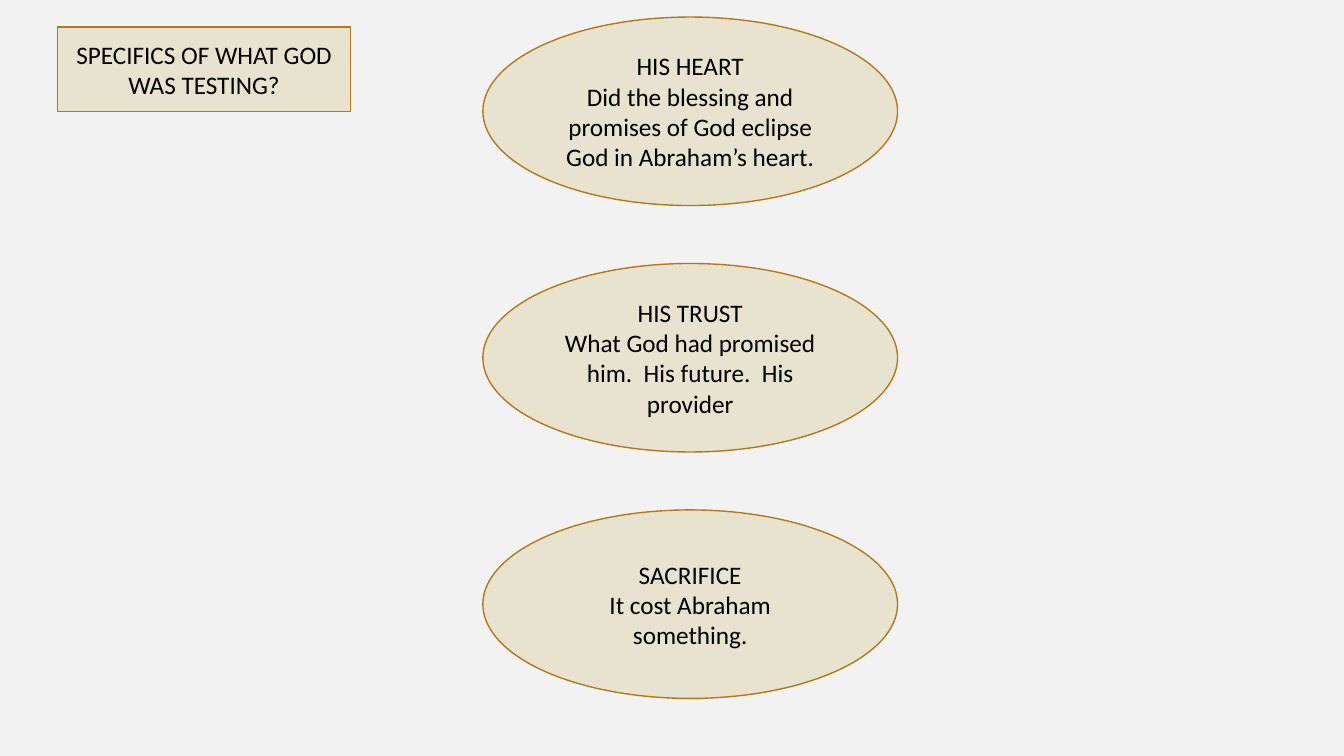
from pptx import Presentation
from pptx.dml.color import RGBColor
from pptx.enum.shapes import MSO_SHAPE
from pptx.enum.text import MSO_ANCHOR, PP_ALIGN
from pptx.util import Cm, Pt

BACKGROUND, SAND, BRONZE, BLACK = "F2F2F2", "E8E3CE", "B67815", "000000"
QUESTION = "SPECIFICS OF WHAT GOD WAS TESTING?"
TESTS = [
    ("HIS HEART", "Did the blessing and promises of God eclipse God in Abraham’s heart."),
    ("HIS TRUST", "What God had promised him.  His future.  His provider"),
    ("SACRIFICE", "It cost Abraham something."),
]


def paint(color_format, color):
    """Set a colour format from a hex string."""
    color_format.rgb = RGBColor.from_string(color)


def write(frame, lines, *, size=18, font="Calibri", color=BLACK, align=PP_ALIGN.CENTER):
    """Fill a text frame with one paragraph per line."""
    frame.word_wrap = True
    frame.vertical_anchor = MSO_ANCHOR.MIDDLE
    for index, line in enumerate(lines):
        paragraph = frame.paragraphs[0] if index == 0 else frame.add_paragraph()
        paragraph.alignment = align
        run = paragraph.add_run()
        run.text = line
        run.font.size = Pt(size)
        run.font.name = font
        paint(run.font.color, color)


def add_panel(slide, outline, box, lines):
    """Add a sand panel with a bronze edge and centred text in a box given in cm."""
    panel = slide.shapes.add_shape(outline, *(Cm(length) for length in box))
    panel.shadow.inherit = False
    panel.fill.solid()
    paint(panel.fill.fore_color, SAND)
    paint(panel.line.color, BRONZE)
    panel.line.width = Pt(1)
    write(panel.text_frame, lines)


def add_question(slide, box):
    """Place the question in its rectangle."""
    add_panel(slide, MSO_SHAPE.RECTANGLE, box, [QUESTION])


def add_tests(slide, box, oval_height=4.75):
    """Spread the tests as ovals evenly down the box."""
    left, top, width, height = box
    pitch = (height - oval_height) / (len(TESTS) - 1)
    for index, test in enumerate(TESTS):
        add_panel(slide, MSO_SHAPE.OVAL, (left, top + index * pitch, width, oval_height), test)


def main():
    """Build and save the slide."""
    deck = Presentation()
    deck.slide_width, deck.slide_height = Cm(33.87), Cm(19.05)
    slide = deck.slides.add_slide(deck.slide_layouts[6])
    slide.background.fill.solid()
    paint(slide.background.fill.fore_color, BACKGROUND)
    add_question(slide, (1.45, 0.68, 7.39, 2.13))
    add_tests(slide, (12.17, 0.43, 10.45, 17.17))
    deck.save("out.pptx")


if __name__ == "__main__":
    main()
